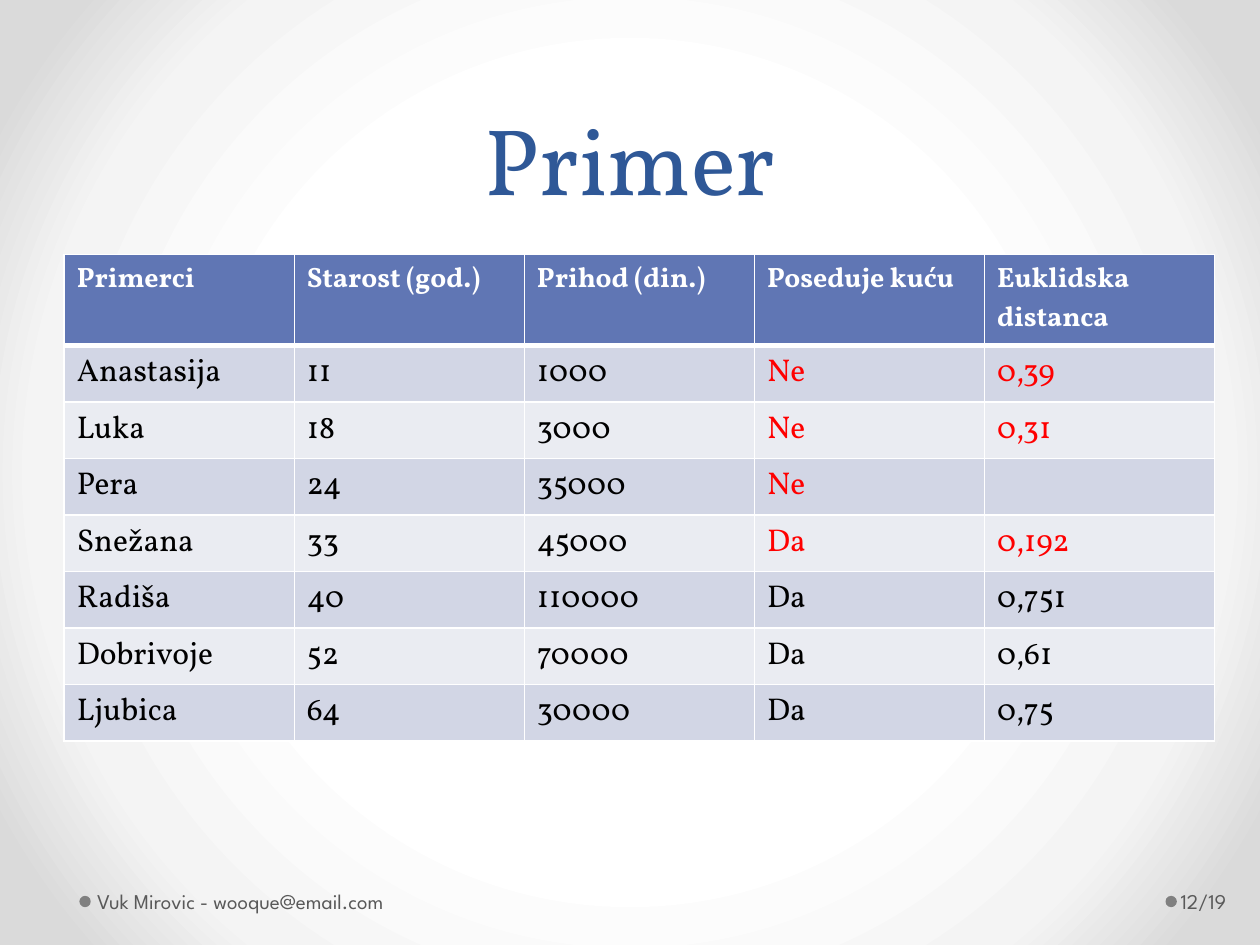
import pptx
import pptx.util
import pptx.dml.color
import pptx.enum.shapes
import pptx.enum.text
import pptx.oxml.ns
import lxml.etree

qn = pptx.oxml.ns.qn
Inches, Pt = pptx.util.Inches, pptx.util.Pt
RGB = pptx.dml.color.RGBColor.from_string
ANCHOR = pptx.enum.text.MSO_ANCHOR

W, H = 10, 7.5
THEME = {
    "title": {"size": 54, "name": "Vollkorn", "color": "2F5897"},
    "head": {"size": 16, "name": "Vollkorn", "color": "FFFFFF", "bold": True},
    "body": {"size": 18, "name": "Vollkorn", "color": "000000", "bold": False},
    "footer": {"size": 12, "name": "League Spartan", "color": "595959"},
    "accent": "FF0000",
    "dot": "808080",
    "border": "FFFFFF",
    "head_fill": "6076B4",
    "bands": ("D2D6E5", "EAECF2"),
    "background": ((50, "FFFFFF"), (76, "F4F4F4"), (92, "DADADA")),
}
HEADER = ("Primerci", "Starost (god.)", "Prihod (din.)", "Poseduje kuću", "Euklidska distanca")
EXAMPLES = (
    ("Anastasija", "11", "1000", "Ne", "0,39"),
    ("Luka", "18", "3000", "Ne", "0,31"),
    ("Pera", "24", "35000", "Ne", ""),
    ("Snežana", "33", "45000", "Da", "0,192"),
    ("Radiša", "40", "110000", "Da", "0,751"),
    ("Dobrivoje", "52", "70000", "Da", "0,61"),
    ("Ljubica", "64", "30000", "Da", "0,75"),
)
NEAREST = {"Anastasija", "Luka", "Pera", "Snežana"}
RESULT_COLUMN = 3


def write(tf, text, style, **changes):
    p = tf.paragraphs[0]
    r = p.add_run()
    r.text = text
    for key, value in {**style, **changes}.items():
        if key == "color":
            r.font.color.rgb = RGB(value)
        else:
            setattr(r.font, key, Pt(value) if key == "size" else value)
    return p


def element(parent, tag, **attrs):
    return lxml.etree.SubElement(parent, qn(tag), {k: str(v) for k, v in attrs.items()})


def paint_background(s):
    s.background.fill.gradient()
    grad = s.element.find(".//" + qn("a:gradFill"))
    for child in list(grad):
        grad.remove(child)
    stops = element(grad, "a:gsLst")
    for pos, color in THEME["background"]:
        element(element(stops, "a:gs", pos=pos * 1000), "a:srgbClr", val=color)
    circle = element(grad, "a:path", path="circle")
    element(circle, "a:fillToRect", **dict.fromkeys("ltrb", 50000))


def add_title(s, box, text):
    sp = s.shapes.title
    for key, value in zip(("left", "top", "width", "height"), box):
        setattr(sp, key, Inches(value))
    tf = sp.text_frame
    tf.auto_size = pptx.enum.text.MSO_AUTO_SIZE.NONE
    tf.vertical_anchor = ANCHOR.BOTTOM
    p = write(tf, text, THEME["title"])
    p.alignment = pptx.enum.text.PP_ALIGN.CENTER
    p.line_spacing = Pt(58)


def set_borders(cell, **widths):
    tcPr = cell._tc.get_or_add_tcPr()
    for side in "LRTB":
        ln = element(tcPr, "a:ln" + side, w=Pt(widths.get(side, 1)))
        element(element(ln, "a:solidFill"), "a:srgbClr", val=THEME["border"])


def add_examples(s, box):
    rows = (HEADER,) + EXAMPLES
    tbl = s.shapes.add_table(len(rows), len(HEADER), *map(Inches, box)).table
    for col in tbl.columns:
        col.width = Inches(box[2] / len(HEADER))
    for i, row in enumerate(rows):
        tbl.rows[i].height = Inches(box[3] / len(rows))
        style = THEME["body"] if i else THEME["head"]
        fill = THEME["bands"][(i - 1) % 2] if i else THEME["head_fill"]
        rule = {0: {"B": 3}, 1: {"T": 3}}.get(i, {})
        for j, text in enumerate(row):
            cell = tbl.cell(i, j)
            set_borders(cell, **rule)
            cell.fill.solid()
            cell.fill.fore_color.rgb = RGB(fill)
            if text:
                marked = row[0] in NEAREST and j >= RESULT_COLUMN
                write(cell.text_frame, text, style, **({"color": THEME["accent"]} if marked else {}))


def add_footer(s, box, text, insets):
    left, top, width, height = box
    dot = 0.09
    sp = s.shapes.add_shape(pptx.enum.shapes.MSO_SHAPE.OVAL, Inches(left - dot),
                            Inches(top + 0.16), Inches(dot), Inches(dot))
    sp.shadow.inherit = False
    sp.fill.solid()
    sp.fill.fore_color.rgb = RGB(THEME["dot"])
    sp.line.fill.background()
    tf = s.shapes.add_textbox(*map(Inches, box)).text_frame
    margins = dict(zip(("margin_left", "margin_right"), map(Inches, insets)))
    for key, value in {"word_wrap": True, "vertical_anchor": ANCHOR.MIDDLE, **margins}.items():
        setattr(tf, key, value)
    write(tf, text, THEME["footer"])


def main():
    prs = pptx.Presentation()
    prs.slide_width, prs.slide_height = Inches(W), Inches(H)
    s = prs.slides.add_slide(prs.slide_layouts[5])
    paint_background(s)
    add_title(s, (0.05 * W, 0, 0.9 * W, 1.75), "Primer")
    add_examples(s, (0.51, 2.02, 9.13, 3.28))
    add_footer(s, (0.72, 6.95, 3.11, 0.4), "Vuk Mirovic - wooque@email.com", (0.05, 0.1))
    add_footer(s, (9.34, 6.95, 0.61, 0.4), "12/19", (0.03, 0.05))
    prs.save("out.pptx")


if __name__ == "__main__":
    main()
